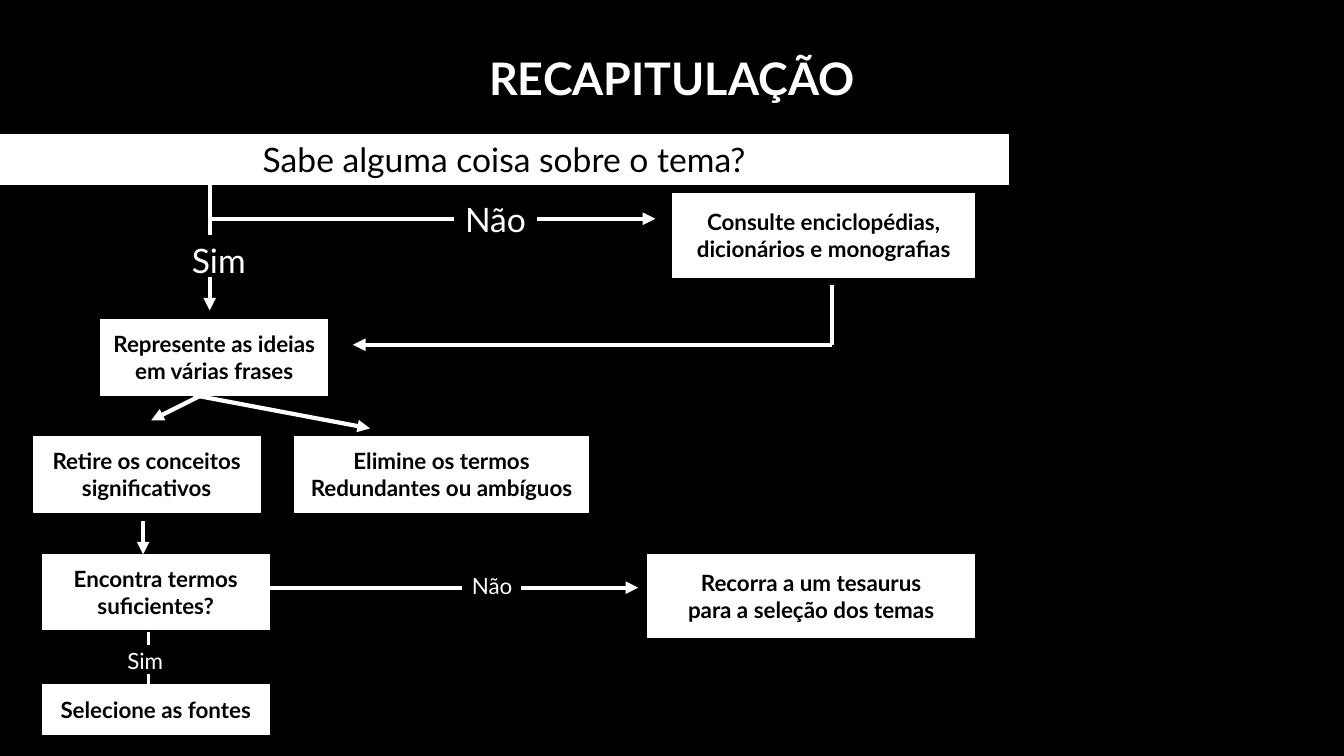
from lxml import etree
from pptx import Presentation
from pptx.dml.color import RGBColor
from pptx.enum.shapes import MSO_CONNECTOR, MSO_SHAPE
from pptx.enum.text import MSO_ANCHOR, PP_ALIGN
from pptx.oxml.ns import qn
from pptx.util import Inches, Pt

BLACK = RGBColor(0x00, 0x00, 0x00)
WHITE = RGBColor(0xFF, 0xFF, 0xFF)
FONT = "Lato"
STRAIGHT = MSO_CONNECTOR.STRAIGHT
RECTANGLE = MSO_SHAPE.RECTANGLE
CENTER = PP_ALIGN.CENTER
MIDDLE, TOP, BOTTOM = MSO_ANCHOR.MIDDLE, MSO_ANCHOR.TOP, MSO_ANCHOR.BOTTOM


class Region:
    """Part of the slide whose pieces are placed from its own top left corner, in inches."""

    def __init__(self, slide, left, top):
        self.shapes = slide.shapes
        self.left, self.top = left, top

    def place(self, x, y):
        return Inches(self.left + x), Inches(self.top + y)

    def step(self, lines, x, y, width, height, size=16, bold=True):
        box = self.shapes.add_shape(
            RECTANGLE, *self.place(x, y), Inches(width), Inches(height))
        box.shadow.inherit = False
        box.fill.solid()
        box.fill.fore_color.rgb = WHITE
        box.line.color.rgb = WHITE
        box.line.width = Pt(0.75)
        fill_text(box.text_frame, lines, size, BLACK, bold, MIDDLE, False)

    def label(self, words, x, y, width, height, size, bold=False, anchor=TOP):
        box = self.shapes.add_textbox(
            *self.place(x, y), Inches(width), Inches(height))
        fill_text(box.text_frame, words, size, WHITE, bold, anchor, True)
        return box.text_frame

    def link(self, start, end, arrow=False, weight=3):
        connector = self.shapes.add_connector(
            STRAIGHT, *self.place(*start), *self.place(*end))
        connector.line.color.rgb = WHITE
        connector.line.width = Pt(weight)
        properties = connector.element.spPr
        if arrow:
            etree.SubElement(properties.find(qn("a:ln")), qn("a:tailEnd"),
                             type="triangle")
        etree.SubElement(properties, qn("a:effectLst"))


def fill_text(frame, lines, size, color, bold, anchor, wrap):
    frame.word_wrap = wrap
    frame.vertical_anchor = anchor
    frame.text = lines
    for paragraph in frame.paragraphs:
        paragraph.alignment = CENTER
        paragraph.font.name = FONT
        paragraph.font.size = Pt(size)
        paragraph.font.bold = bold
        paragraph.font.color.rgb = color


def draw_title(slide, left, top, width, height):
    title = Region(slide, left, top).label(
        "RECAPITULAÇÃO", 0, 0, width, height, 32, bold=True, anchor=BOTTOM)
    title.paragraphs[0].line_spacing = 0.9


def draw_topic_question(slide, left, top):
    """First question with its yes and no branches."""
    topic = Region(slide, left, top)
    yes_x, no_y = 2.08, 0.84
    topic.link((yes_x, 0.5), (yes_x, 1))
    topic.link((yes_x, no_y), (4.5, no_y))
    topic.label("Não", 4, 0.59, 1.83, 0.5, 24)
    topic.link((5.33, no_y), (6.5, no_y), arrow=True)
    topic.step("Sabe alguma coisa sobre o tema?", 0, 0, 10, 0.5, 24, bold=False)
    topic.label("Sim", 1.67, 1, 1, 0.5, 24)
    topic.link((yes_x, 1.42), (yes_x, 1.75), arrow=True)
    topic.step("Consulte enciclopédias,\ndicionários e monografias",
               6.67, 0.59, 3, 0.83)


def draw_phrases(slide, left, top):
    """Writing the ideas as phrases, then sorting their terms."""
    phrases = Region(slide, left, top)
    return_x, return_y = 7.92, 0.25
    phrases.step("Represente as ideias\nem várias frases", 0.67, 0, 2.25, 0.75)
    phrases.link((return_x, -0.34), (return_x, return_y))
    phrases.link((return_x, return_y), (3.17, return_y), arrow=True)
    phrases.step("Retire os conceitos\nsignificativos", 0, 1.16, 2.25, 0.75)
    phrases.step("Elimine os termos\nRedundantes ou ambíguos",
                 2.59, 1.16, 2.92, 0.75)
    phrases.link((1.67, 0.75), (1.17, 1), arrow=True)
    phrases.link((1.59, 0.75), (3.34, 1.08), arrow=True)
    phrases.link((1.09, 2), (1.09, 2.33), arrow=True)


def draw_terms_question(slide, left, top):
    """Second question with its yes and no branches."""
    terms = Region(slide, left, top)
    yes_x, no_y = 1.05, 0.33
    terms.step("Encontra termos\nsuficientes?", 0, 0, 2.25, 0.75)
    terms.step("Selecione as fontes", 0, 1.29, 2.25, 0.5)
    terms.link((2.25, no_y), (4.16, no_y))
    terms.label("Não", 3.75, 0.13, 1.42, 0.37, 16)
    terms.link((4.75, no_y), (5.91, no_y), arrow=True)
    terms.step("Recorra a um tesaurus\npara a seleção dos temas",
               6, 0, 3.25, 0.83)
    terms.label("Sim", 0.52, 0.87, 1, 0.37, 16)
    for y in (0.77, 1.19):
        terms.link((yes_x, y), (yes_x, y + 0.13), weight=2)


def main():
    deck = Presentation()
    deck.slide_width, deck.slide_height = Inches(13.33), Inches(7.5)
    slide = deck.slides.add_slide(deck.slide_layouts[6])
    slide.background.fill.solid()
    slide.background.fill.fore_color.rgb = BLACK
    draw_title(slide, 0, 0.29, 13.33, 0.8)
    draw_topic_question(slide, 0, 1.33)
    draw_phrases(slide, 0.33, 3.17)
    draw_terms_question(slide, 0.42, 5.5)
    deck.save("out.pptx")


if __name__ == "__main__":
    main()
